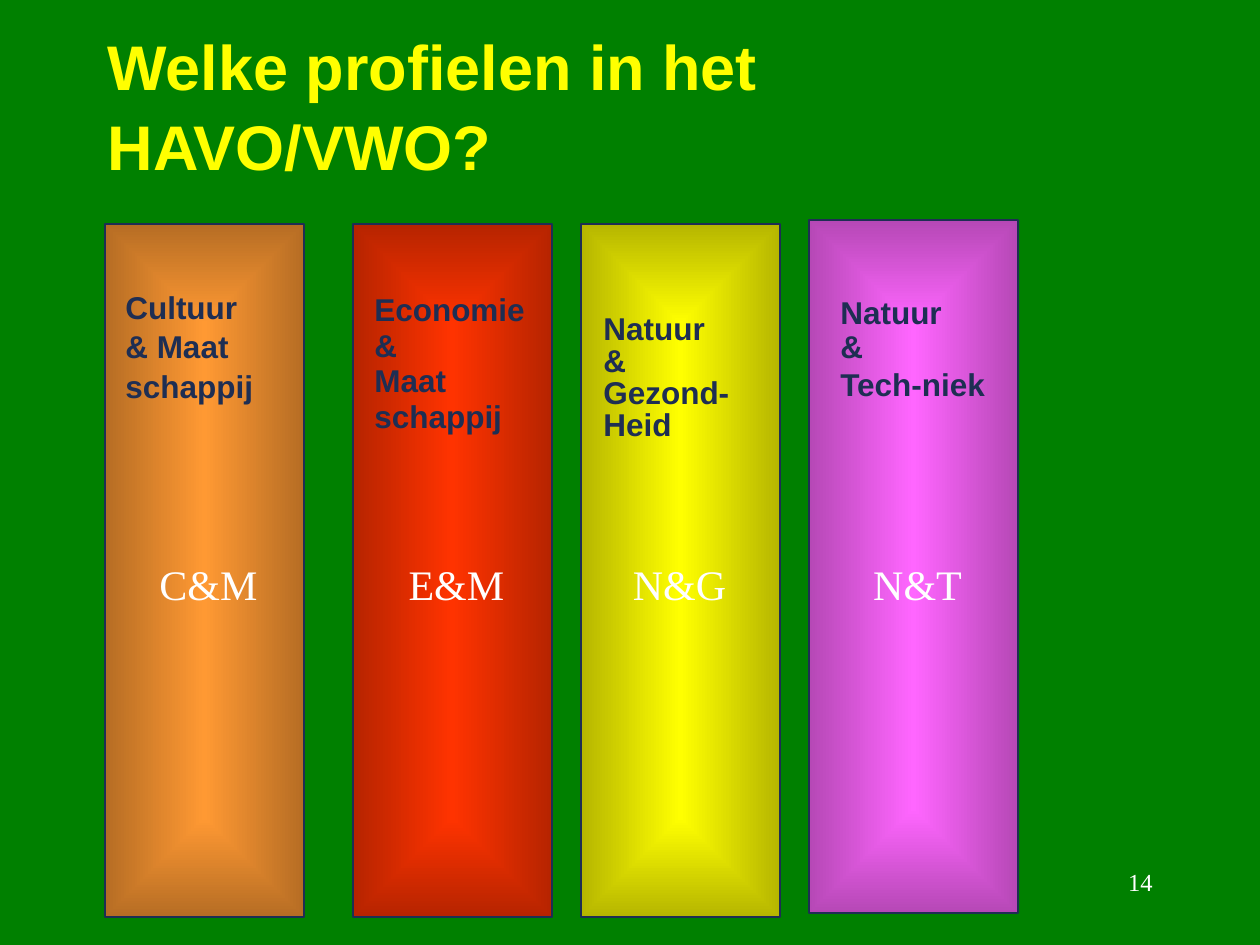
import pptx
import pptx.util
import pptx.dml.color
import pptx.enum.shapes
import pptx.enum.text
import pptx.oxml
import pptx.oxml.ns

RGB = pptx.dml.color.RGBColor
ALIGN = pptx.enum.text.PP_ALIGN
ANCHOR = pptx.enum.text.MSO_ANCHOR
Pt = pptx.util.Pt

PX = 914400 // 126
GREEN = RGB(0x00, 0x80, 0x00)
YELLOW = RGB(0xFF, 0xFF, 0x00)
NAVY = RGB(0x1E, 0x2E, 0x53)
WHITE = RGB(0xFF, 0xFF, 0xFF)
ORANGE = RGB(0xFF, 0x99, 0x33)
RED = RGB(0xFF, 0x33, 0x00)
PINK = RGB(0xFF, 0x66, 0xFF)
SANS, SERIF = "Arial", "Times New Roman"

TITLE = "Welke profielen in het HAVO/VWO?"
PAGE = "14"

# Boxes are (left, top, width, height) in px; gap is (line spacing, points before).
TIGHT = 9.5
PROFILES = [
    dict(color=ORANGE, bar=(105, 224, 199, 693), box=(113, 275, 179, 154),
         lines=["Cultuur", "& Maat", "schappij"], gaps=[(0.6, TIGHT)] * 3,
         code="C&M", tag=(144, 552, 129, 63)),
    dict(color=RED, bar=(353, 224, 199, 693), box=(362, 275, 205, 189),
         lines=["Economie", "&", "Maat", "schappij"], gaps=[(0.5, TIGHT)] * 4,
         code="E&M", tag=(392, 552, 129, 63)),
    dict(color=YELLOW, bar=(581, 224, 199, 693), box=(591, 254, 181, 260),
         lines=["Natuur", "&", "Gezond-", "Heid"], gaps=[(0.4, TIGHT)] * 4,
         code="N&G", tag=(610, 552, 139, 63)),
    dict(color=PINK, bar=(809, 220, 209, 693), box=(828, 243, 179, 229),
         lines=["Natuur", "&", "Tech-niek"], gaps=[(0.4, 0), (1.0, 0), (1.0, 0)],
         code="N&T", tag=(838, 552, 159, 63)),
]


def emu(box):
    return [n * PX for n in box]


def write(para, text, size, face, color, bold=False):
    run = para.add_run()
    run.text = text
    font = run.font
    font.size, font.name, font.bold = Pt(size), face, bold
    font.color.rgb = color


def add_box(slide, box, anchor=ANCHOR.TOP):
    frame = slide.shapes.add_textbox(*emu(box)).text_frame
    frame.word_wrap = True
    frame.vertical_anchor = anchor
    return frame


def add_bar(slide, box, color):
    """Draw a bar that glows from a shaded rim to its bright centre."""
    bar = slide.shapes.add_shape(
        pptx.enum.shapes.MSO_SHAPE.RECTANGLE, *emu(box))
    bar.shadow.inherit = False
    bar.line.color.rgb = NAVY
    bar.line.width = Pt(1)
    fill = pptx.oxml.parse_xml(
        f'<a:gradFill {pptx.oxml.ns.nsdecls("a")} rotWithShape="1"><a:gsLst>'
        f'<a:gs pos="0"><a:srgbClr val="{color}"/></a:gs>'
        f'<a:gs pos="100000"><a:srgbClr val="{color}">'
        '<a:shade val="46275"/></a:srgbClr></a:gs></a:gsLst>'
        '<a:path path="shape"><a:fillToRect l="50000" t="50000" '
        'r="50000" b="50000"/></a:path></a:gradFill>')
    bar.element.spPr.find(pptx.oxml.ns.qn("a:prstGeom")).addnext(fill)


def add_label(slide, item):
    frame = add_box(slide, item["box"], ANCHOR.MIDDLE)
    for i, (line, gap) in enumerate(zip(item["lines"], item["gaps"])):
        para = frame.add_paragraph() if i else frame.paragraphs[0]
        para.line_spacing = gap[0]
        para.space_before = Pt(gap[1] if i else 0)
        write(para, line, 18, SANS, NAVY, True)


def add_line(slide, box, text, size, align):
    para = add_box(slide, box).paragraphs[0]
    para.alignment = align
    write(para, text, size, SERIF, WHITE)


def add_title(slide):
    title = slide.shapes.title
    title.left, title.top, title.width, title.height = emu((95, 32, 1071, 157))
    frame = title.text_frame
    frame.word_wrap = True
    frame.auto_size = pptx.enum.text.MSO_AUTO_SIZE.NONE
    frame.vertical_anchor = ANCHOR.BOTTOM
    para = frame.paragraphs[0]
    para.alignment = ALIGN.LEFT
    para.line_spacing = 1.05
    write(para, TITLE, 36, SANS, YELLOW, True)


def main():
    deck = pptx.Presentation()
    deck.slide_width, deck.slide_height = 1260 * PX, 945 * PX
    slide = deck.slides.add_slide(deck.slide_layouts[5])
    slide.background.fill.solid()
    slide.background.fill.fore_color.rgb = GREEN
    add_title(slide)
    for item in PROFILES:
        add_bar(slide, item["bar"], item["color"])
        add_label(slide, item)
        add_line(slide, item["tag"], item["code"], 24, ALIGN.CENTER)
    add_line(slide, (903, 861, 262, 63), PAGE, 14, ALIGN.RIGHT)
    deck.save("out.pptx")


if __name__ == "__main__":
    main()
